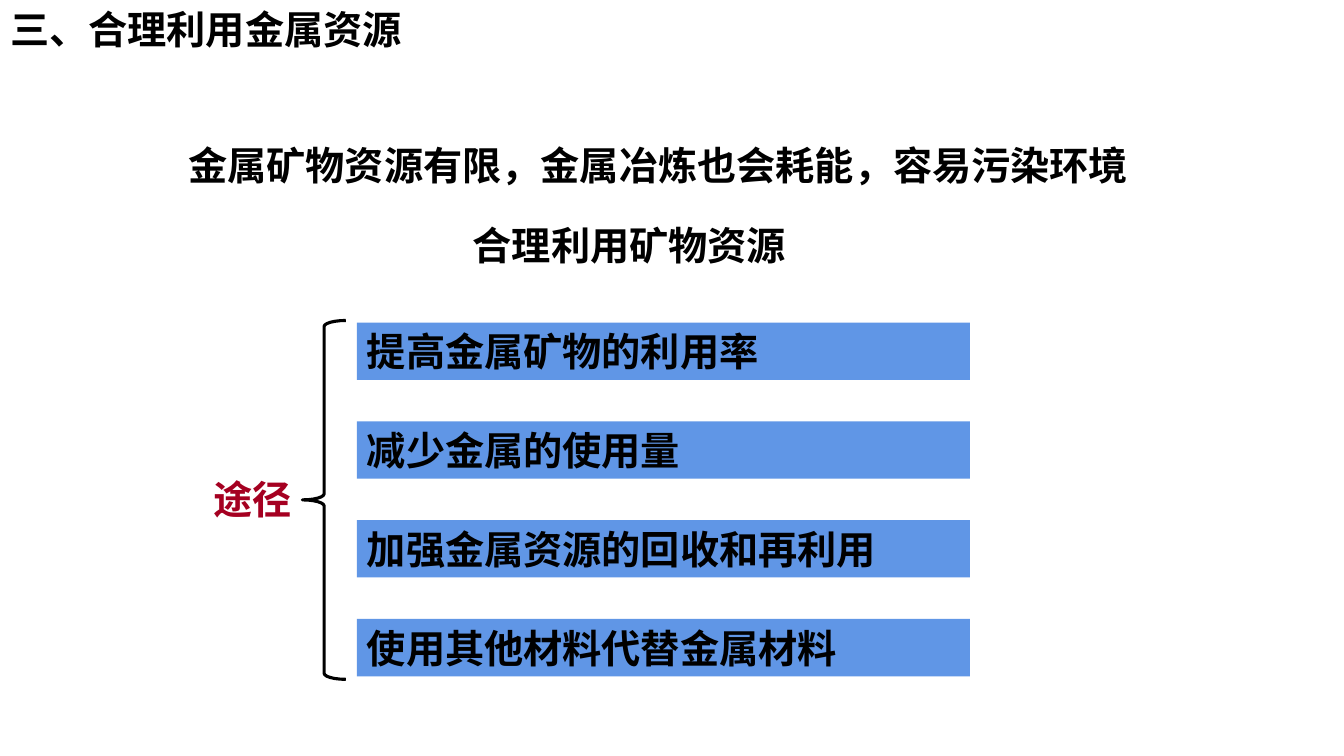
from lxml.etree import SubElement
from pptx import Presentation
from pptx.dml.color import RGBColor
from pptx.enum.shapes import MSO_SHAPE as Shape
from pptx.enum.text import MSO_ANCHOR as Anchor, MSO_AUTO_SIZE as Fit, PP_ALIGN as Align
from pptx.oxml.ns import qn
from pptx.util import Inches, Pt

FONT = "Noto Sans CJK SC"
COLORS = {"ink": "000000", "red": "A50021", "blue": "6096E6"}
ROW = 0.57


def write(shape, text, color="ink", size=28, wrap=True):
    frame = shape.text_frame
    frame.word_wrap = wrap
    frame.auto_size = Fit.SHAPE_TO_FIT_TEXT
    frame.vertical_anchor = Anchor.TOP
    frame.margin_left = frame.margin_right = Inches(0.1)
    frame.margin_top = frame.margin_bottom = Inches(0.05)
    para = frame.paragraphs[0]
    para.alignment = Align.LEFT
    run = para.add_run()
    run.text = text
    font = run.font
    font.size, font.bold, font.name = Pt(size), True, FONT
    font.color.rgb = RGBColor.from_string(COLORS[color])
    # Chinese glyphs take the East Asian typeface
    SubElement(run._r.get_or_add_rPr(), qn("a:ea"), typeface=FONT)


deck = Presentation()
deck.slide_width, deck.slide_height = Inches(13.33), Inches(7.5)
slide = deck.slides.add_slide(deck.slide_layouts[5])
shapes = slide.shapes

# Title
title = shapes.title
title.left, title.top = Inches(0), Inches(0)
title.width, title.height = Inches(4.09), Inches(ROW)
write(title, "三、合理利用金属资源", wrap=False)

# Statements and the brace label
labels = [
    ("金属矿物资源有限，金属冶炼也会耗能，容易污染环境", 1.77, 1.35, 9.62, "ink"),
    ("合理利用矿物资源", 4.59, 2.15, 3.48, "ink"),
    ("途径", 2.02, 4.67, 0.99, "red"),
]
for text, left, top, width, color in labels:
    box = shapes.add_textbox(Inches(left), Inches(top), Inches(width), Inches(ROW))
    write(box, text, color=color)

# Ways to use metals well
ways = [
    "提高金属矿物的利用率",
    "减少金属的使用量",
    "加强金属资源的回收和再利用",
    "使用其他材料代替金属材料",
]
for i, text in enumerate(ways):
    bar = shapes.add_shape(Shape.RECTANGLE, Inches(3.54), Inches(3.2 + 0.98 * i),
                           Inches(6.08), Inches(ROW))
    bar.shadow.inherit = False
    bar.fill.solid()
    bar.fill.fore_color.rgb = RGBColor.from_string(COLORS["blue"])
    bar.line.fill.background()
    write(bar, text)

# Brace
brace = shapes.add_shape(Shape.LEFT_BRACE, Inches(3), Inches(3.18), Inches(0.43), Inches(3.56))
brace.adjustments[0], brace.adjustments[1] = 0.14, 0.5
brace.shadow.inherit = False
brace.fill.background()
brace.line.color.rgb = RGBColor.from_string(COLORS["ink"])
brace.line.width = Pt(2.25)

deck.save("out.pptx")
